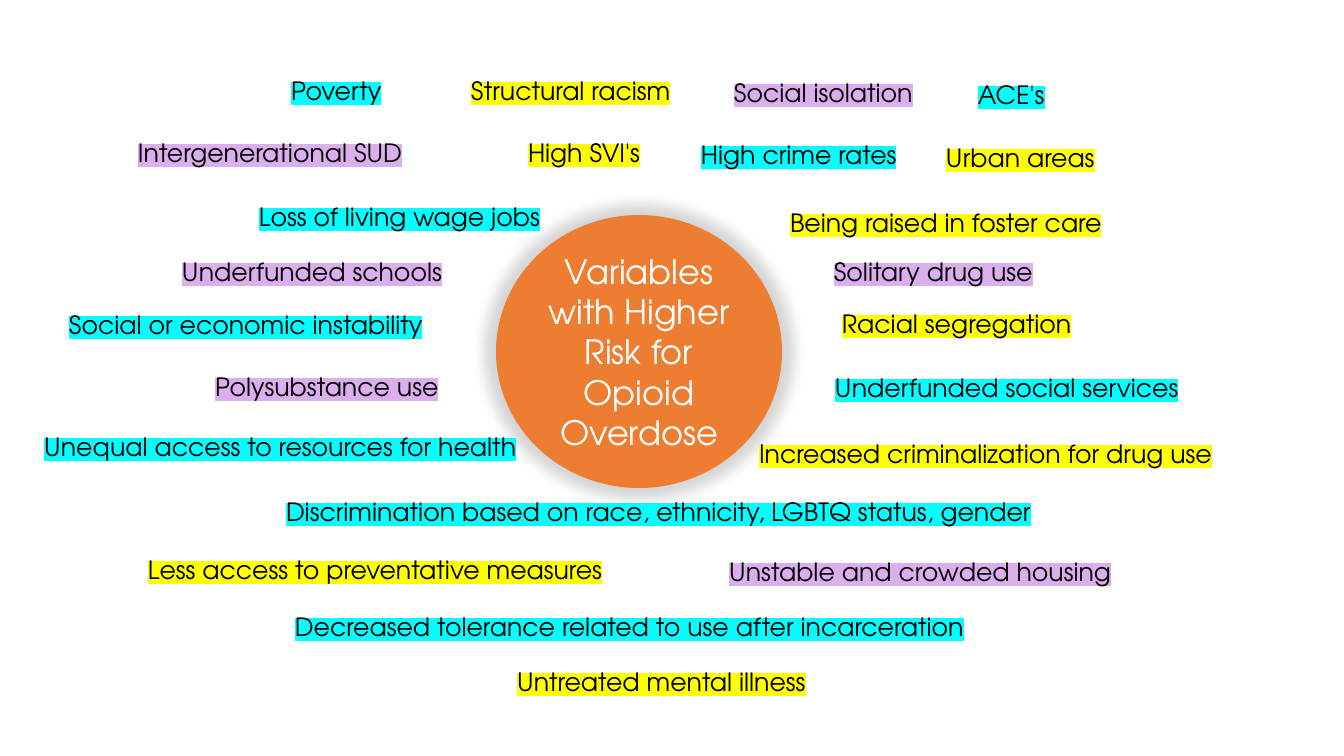
"""Builds a slide of opioid overdose risk variables around a central circle."""
from lxml.etree import SubElement
from pptx import Presentation
from pptx.dml.color import RGBColor
from pptx.enum.shapes import MSO_SHAPE as Shape
from pptx.enum.text import MSO_ANCHOR as Anchor, MSO_AUTO_SIZE as AutoSize, PP_ALIGN as Align
from pptx.oxml import parse_xml
from pptx.oxml.ns import nsdecls, qn
from pptx.util import Pt

EMU_PER_PX = 914400 / 100.8
FONT = "TeX Gyre Adventor"
BLACK = RGBColor(0x00, 0x00, 0x00)
WHITE = RGBColor(0xFF, 0xFF, 0xFF)
ORANGE = RGBColor(0xED, 0x7D, 0x31)
CYAN = RGBColor(0x00, 0xFF, 0xFF)
YELLOW = RGBColor(0xFF, 0xFF, 0x00)
LILAC = RGBColor(0xDB, 0xAE, 0xEE)

LABELS = [
    ("Poverty", CYAN, 291, 75, 103, 30),
    ("Structural racism", YELLOW, 471, 75, 250, 30),
    ("Social isolation", LILAC, 734, 77, 225, 30),
    ("ACE's", CYAN, 978, 79, 101, 30),
    ("Intergenerational SUD", LILAC, 138, 137, 375, 30),
    ("High SVI's", YELLOW, 528, 137, 136, 30),
    ("High crime rates", CYAN, 701, 139, 221, 30),
    ("Urban areas", YELLOW, 946, 142, 259, 30),
    ("Loss of living wage jobs", CYAN, 259, 201, 319, 30),
    ("Underfunded schools", LILAC, 182, 256, 296, 30),
    ("Solitary drug use", LILAC, 834, 256, 275, 30),
    ("Social or economic instability", CYAN, 69, 309, 427, 30),
    ("Racial segregation", YELLOW, 842, 308, 302, 30),
]
INDENTED_LABELS = [
    ("Polysubstance use", LILAC, 205, 351, 273, 71),
    ("Underfunded social services", CYAN, 825, 352, 447, 73),
    ("Unequal access to resources for health", CYAN, 34, 411, 560, 50),
    ("Increased criminalization for drug use", YELLOW, 749, 418, 548, 57),
    ("Discrimination based on race, ethnicity, LGBTQ status, gender", CYAN, 276, 476, 920, 86),
    ("Decreased tolerance related to use after incarceration", CYAN, 285, 591, 774, 94),
]
FRAMED_LABELS = [
    ("Being raised in foster care", YELLOW, 780, 187, 518, 68),
    ("Less access to preventative measures", YELLOW, 138, 534, 571, 73),
    ("Unstable and crowded housing", LILAC, 719, 536, 515, 67),
    ("Untreated mental illness", YELLOW, 507, 646, 348, 69),
]


def px(length):
    """Turn pixels into EMU."""
    return round(length * EMU_PER_PX)


def set_insets(frame, left, top, right, bottom):
    """Set the four text margins in pixels."""
    frame.margin_left, frame.margin_top = px(left), px(top)
    frame.margin_right, frame.margin_bottom = px(right), px(bottom)


def format_run(run, size, color):
    """Set font, size and colour of a run."""
    run.font.name = FONT
    run.font.size = Pt(size)
    run.font.color.rgb = color


def highlight(run, color):
    """Put a marker colour behind a run."""
    properties = run.font._element
    marker = SubElement(properties, qn("a:highlight"))
    SubElement(marker, qn("a:srgbClr"), val=str(color))
    properties.find(qn("a:solidFill")).addnext(marker)


def write_label(frame, text, color):
    """Write highlighted text into a text frame without margins."""
    frame.word_wrap = True
    frame.vertical_anchor = Anchor.TOP
    frame.text = text
    set_insets(frame, 0, 0, 0, 0)
    paragraph = frame.paragraphs[0]
    paragraph.alignment = Align.LEFT
    format_run(paragraph.runs[0], 18, BLACK)
    highlight(paragraph.runs[0], color)


def indent_label(frame):
    """Give a label its margins and a hanging indent."""
    set_insets(frame, 10, 20, 10, 5)
    paragraph = frame.paragraphs[0]
    paragraph.level = 1
    properties = paragraph._p.get_or_add_pPr()
    properties.set("marL", str(px(12)))
    properties.set("indent", str(px(-12)))


def add_label(slide, text, color, *bounds):
    """Add a highlighted label and return its text frame."""
    frame = slide.shapes.add_textbox(*map(px, bounds)).text_frame
    write_label(frame, text, color)
    return frame


def add_framed_label(slide, text, color, *bounds):
    """Add an indented label in a rectangle with a white outline."""
    rectangle = slide.shapes.add_shape(Shape.RECTANGLE, *map(px, bounds))
    rectangle.shadow.inherit = False
    rectangle.fill.background()
    rectangle.line.color.rgb = WHITE
    rectangle.line.width = Pt(1)
    write_label(rectangle.text_frame, text, color)
    indent_label(rectangle.text_frame)


def add_soft_shadow(shape):
    """Add an even blurred shadow around a shape."""
    shape._element.spPr.append(parse_xml(
        f'<a:effectLst {nsdecls("a")}>'
        f'<a:outerShdw blurRad="{px(14)}" dist="0" sx="108000" sy="108000" algn="ctr" rotWithShape="0">'
        '<a:srgbClr val="000000"><a:alpha val="16000"/></a:srgbClr>'
        '</a:outerShdw></a:effectLst>'))


def add_circle(slide, text, *bounds):
    """Add the central circle with its title."""
    circle = slide.shapes.add_shape(Shape.OVAL, *map(px, bounds))
    circle.fill.solid()
    circle.fill.fore_color.rgb = ORANGE
    circle.line.fill.background()
    add_soft_shadow(circle)
    frame = circle.text_frame
    frame.word_wrap = True
    frame.vertical_anchor = Anchor.MIDDLE
    set_insets(frame, 10, 5, 10, 5)
    frame.text = text
    frame.paragraphs[0].alignment = Align.CENTER
    format_run(frame.paragraphs[0].runs[0], 24, WHITE)


def main():
    """Build and save the slide."""
    presentation = Presentation()
    presentation.slide_width, presentation.slide_height = px(1344), px(756)
    slide = presentation.slides.add_slide(presentation.slide_layouts[6])
    add_circle(slide, "Variables with Higher Risk for Opioid Overdose", 496, 215, 286, 273)
    for label in LABELS:
        add_label(slide, *label).auto_size = AutoSize.SHAPE_TO_FIT_TEXT
    for label in INDENTED_LABELS:
        indent_label(add_label(slide, *label))
    for label in FRAMED_LABELS:
        add_framed_label(slide, *label)
    presentation.save("out.pptx")


if __name__ == "__main__":
    main()
